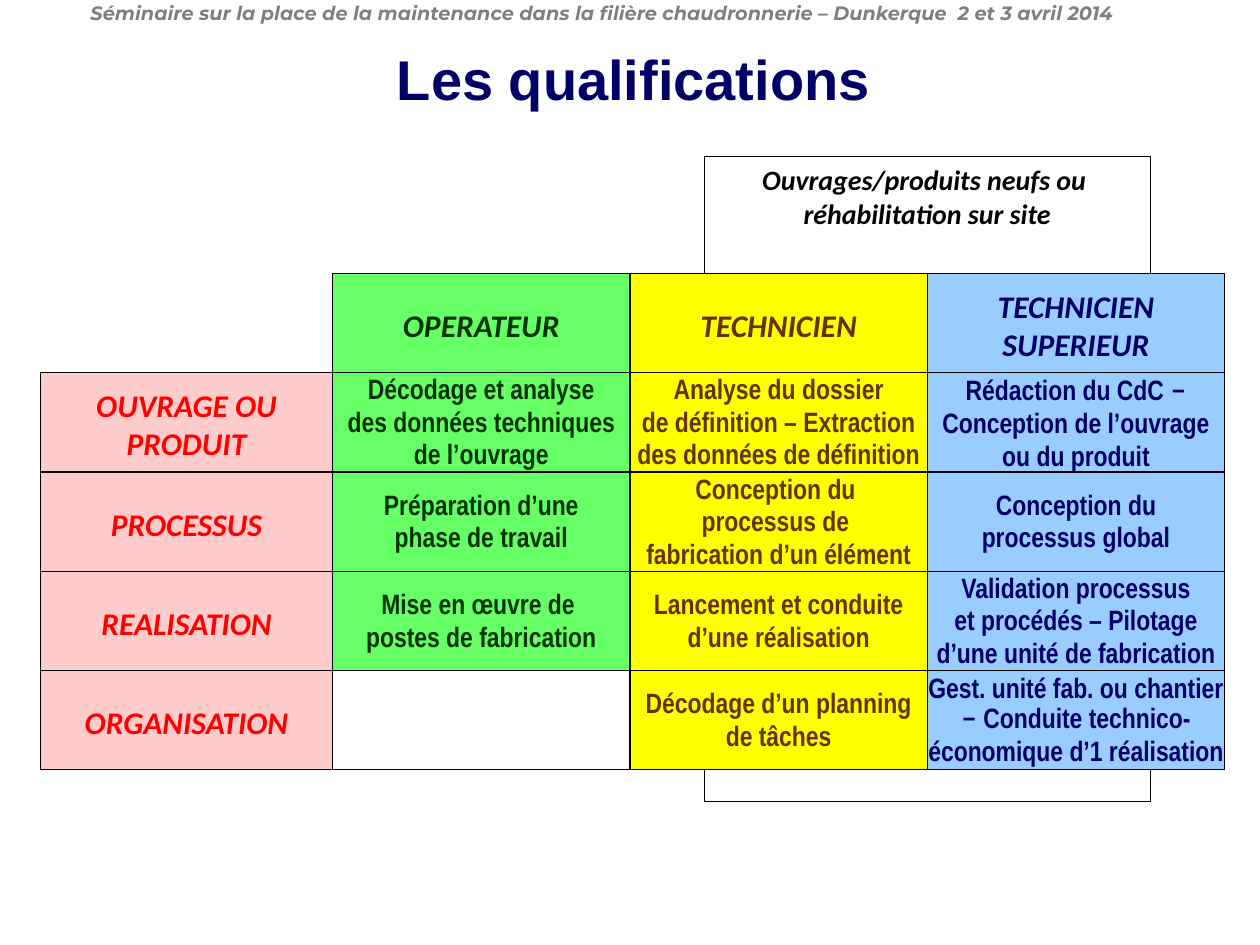
"""Build the slide that sets out qualifications by level and by field of work."""
from pptx import Presentation
from pptx.dml.color import RGBColor
from pptx.enum.shapes import MSO_SHAPE
from pptx.enum.text import MSO_ANCHOR, PP_ALIGN
from pptx.util import Inches, Pt

CENTER, TOP, MIDDLE = PP_ALIGN.CENTER, MSO_ANCHOR.TOP, MSO_ANCHOR.MIDDLE
RECTANGLE = MSO_SHAPE.RECTANGLE
COLORS = {
    "black": "000000", "gray": "7F7F7F", "navy": "000066", "red": "FF0000",
    "pink": "FFCCCC", "green": "66FF66", "forest": "003300",
    "yellow": "FFFF00", "brown": "663300", "sky": "99CCFF",
}
HEADING = {"name": "Calibri", "size": Pt(18), "bold": True, "italic": True}
DETAIL = {"name": "Arial Narrow", "size": Pt(16), "bold": True}
DASH = {"name": "Calibri", "size": Pt(18), "bold": True}
SCOPE = HEADING | {"size": Pt(16)}
TITLE = {"name": "Arial", "size": Pt(32), "bold": True}
SEMINAR = {"name": "Montserrat", "size": Pt(11), "bold": True, "italic": True}

LEVELS = [("pink", "red"), ("green", "forest"), ("yellow", "brown"), ("sky", "navy")]
GRID = [
    ["", "OPERATEUR", "TECHNICIEN", "TECHNICIEN\nSUPERIEUR"],
    ["OUVRAGE OU\nPRODUIT",
     "Décodage et analyse\ndes données techniques\nde l’ouvrage",
     "Analyse du dossier\nde définition – Extraction\ndes données de définition",
     "Rédaction du CdC |–|\nConception de l’ouvrage\nou du produit"],
    ["PROCESSUS",
     "Préparation d’une\nphase de travail",
     "Conception du \nprocessus de \nfabrication d’un élément",
     "Conception du\nprocessus global"],
    ["REALISATION",
     "Mise en œuvre de \npostes de fabrication",
     "Lancement et conduite\nd’une réalisation",
     "Validation processus\net procédés – Pilotage\nd’une unité de fabrication"],
    ["ORGANISATION",
     "",
     "Décodage d’un planning\nde tâches",
     "Gest. unité fab. ou chantier\n|–| Conduite technico-\néconomique d’1 réalisation"],
]
LABEL_LEFT, LEVELS_LEFT, LEVEL_WIDTH = Inches(0.32), Inches(2.64), Inches(2.36)
GRID_TOP, GRID_BOTTOM = Inches(2.17), Inches(6.11)
ROW_HEIGHT = (GRID_BOTTOM - GRID_TOP) // len(GRID)


def write(frame, text, font_format, color, align=CENTER):
    """Fill a text frame line by line; parts between bars take the dash format."""
    for index, line in enumerate(text.split("\n")):
        paragraph = frame.paragraphs[0] if index == 0 else frame.add_paragraph()
        paragraph.alignment = align
        if font_format is DETAIL:
            paragraph.line_spacing = 0.8
            if index and not line.startswith("|"):
                paragraph.space_before = Pt(3.2)
        for part, words in enumerate(line.split("|")):
            if words:
                run = paragraph.add_run()
                run.text = words
                run.font.color.rgb = RGBColor.from_string(COLORS[color])
                for key, value in (DASH if part % 2 else font_format).items():
                    setattr(run.font, key, value)


def add_box(left, top, width, height, fill=None):
    """Add a thinly outlined rectangle, filled when a colour is given."""
    box = slide.shapes.add_shape(RECTANGLE, left, top, width, height)
    box.shadow.inherit = False
    box.line.color.rgb = RGBColor.from_string(COLORS["black"])
    box.line.width = Pt(0.75)
    if fill:
        box.fill.solid()
        box.fill.fore_color.rgb = RGBColor.from_string(COLORS[fill])
    else:
        box.fill.background()
    box.text_frame.word_wrap = False
    return box


deck = Presentation()
deck.slide_width, deck.slide_height = Inches(10), Inches(7.5)
slide = deck.slides.add_slide(deck.slide_layouts[5])

title = slide.shapes.title
title.left, title.top = Inches(1.84), Inches(0.3)
title.width, title.height = Inches(6.38), Inches(0.64)
title.text_frame.vertical_anchor = MIDDLE
write(title.text_frame, "Les qualifications", TITLE, "navy")

seminar = slide.shapes.add_textbox(Inches(0.62), Inches(-0.04), Inches(8.73), Inches(0.29))
seminar.text_frame.word_wrap = False
write(seminar.text_frame,
      "Séminaire sur la place de la maintenance dans la filière chaudronnerie"
      " – Dunkerque  2 et 3 avril 2014",
      SEMINAR, "gray", align=None)

for row in range(1, len(GRID)):
    add_box(LEVELS_LEFT, GRID_TOP + row * ROW_HEIGHT, 3 * LEVEL_WIDTH, ROW_HEIGHT)

scope = add_box(Inches(5.59), Inches(1.24), Inches(3.54), Inches(5.12))
scope.text_frame.vertical_anchor = TOP
write(scope.text_frame, "Ouvrages/produits neufs ou \nréhabilitation sur site", SCOPE, "black")

for row, texts in enumerate(GRID):
    for column, (text, (fill, ink)) in enumerate(zip(texts, LEVELS)):
        if not text:
            continue
        left = LEVELS_LEFT + (column - 1) * LEVEL_WIDTH if column else LABEL_LEFT
        width = LEVEL_WIDTH if column else LEVELS_LEFT - LABEL_LEFT
        cell = add_box(left, GRID_TOP + row * ROW_HEIGHT, width, ROW_HEIGHT, fill)
        frame_format = {"vertical_anchor": MIDDLE, "margin_left": 0, "margin_right": 0,
                        "margin_top": Inches(0.03), "margin_bottom": 0}
        for key, value in frame_format.items():
            setattr(cell.text_frame, key, value)
        write(cell.text_frame, text, DETAIL if row and column else HEADING, ink)

deck.save("out.pptx")
